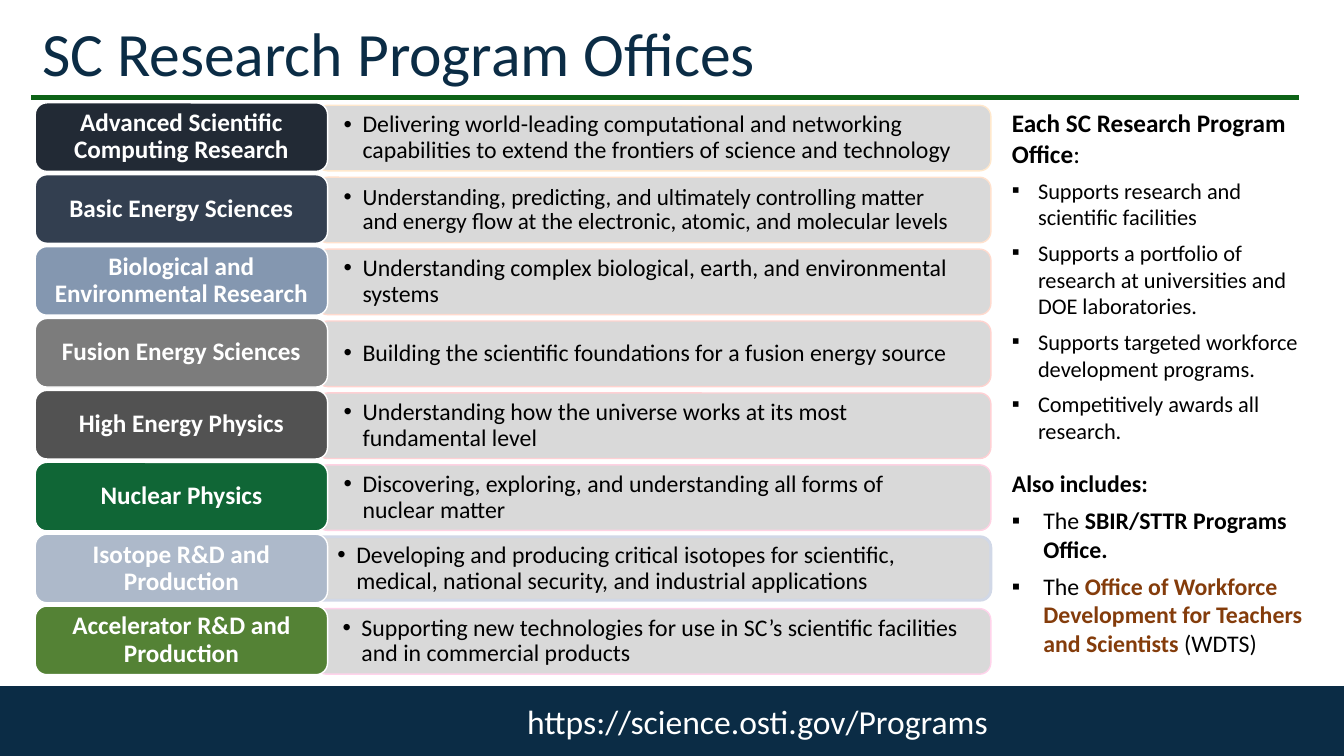
from dataclasses import dataclass

from lxml import etree
from pptx import Presentation
from pptx import util as u
from pptx.dml.color import RGBColor
from pptx.enum import shapes, text
from pptx.oxml import ns

COLUMNS, ROWS = 160, 90
CELL = u.Inches(7.5) // ROWS


@dataclass(frozen=True)
class Theme:
    font: str = "Calibri"
    navy: str = "0B2C45"
    green: str = "0D6317"
    grey: str = "D9D9D9"
    white: str = "FFFFFF"
    black: str = "000000"
    brown: str = "843C0B"
    title: float = 44
    address: float = 24
    heading: float = 18
    body: float = 17
    small: float = 16


@dataclass(frozen=True)
class Box:
    left: float
    top: float
    width: float
    height: float

    def lengths(self) -> list[int]:
        return [cells(value) for value in (self.left, self.top, self.width, self.height)]


@dataclass(frozen=True)
class Office:
    name: str
    color: str
    mission: str
    outline: str
    size: float = 17
    detail_left: float = 37.68
    detail_height: float = 7.8
    outline_width: float = 1


@dataclass(frozen=True)
class Piece:
    text: str
    size: float
    bold: bool = False
    color: str = "000000"


@dataclass(frozen=True)
class Entry:
    pieces: list[Piece]
    indent: float = 0
    after: float = 6


THEME = Theme()
FIRST_ROW, ROW_PITCH = 12.24, 8.56
DETAIL_RIGHT = 117.96
CORNER = 0.17

OFFICES = [
    Office("Advanced Scientific Computing Research", "222A35",
           "Delivering world-leading computational and networking capabilities "
           "to extend the frontiers of science and technology", "FFE8CC"),
    Office("Basic Energy Sciences", "333F50",
           "Understanding, predicting, and ultimately controlling matter and energy flow "
           "at the electronic, atomic, and molecular levels", "FFE1CD", size=16.5),
    Office("Biological and Environmental Research", "8497B0",
           "Understanding complex biological, earth, and environmental systems", "FFDACE"),
    Office("Fusion Energy Sciences", "7C7C7C",
           "Building the scientific foundations for a fusion energy source", "FFD3CF"),
    Office("High Energy Physics", "525252",
           "Understanding how the universe works at its most fundamental level", "FFD0D4"),
    Office("Nuclear Physics", "106636",
           "Discovering, exploring, and understanding all forms of nuclear matter", "FFD2E3"),
    Office("Isotope R&D and Production", "ADB9CA",
           "Developing and producing critical isotopes for scientific, medical, "
           "national security, and industrial applications", "D1D8E7",
           detail_left=36.96, detail_height=7.56, outline_width=2),
    Office("Accelerator R&D and Production", "548235",
           "Supporting new technologies for use in SC’s scientific facilities "
           "and in commercial products", "FFD3EB", detail_left=37.56),
]

SIDEBAR = [
    Entry([Piece("Each SC Research Program Office", THEME.heading, True), Piece(":", THEME.heading)]),
    Entry([Piece("Supports research and scientific facilities", THEME.small)], 3.12),
    Entry([Piece("Supports a portfolio of research at universities and DOE laboratories.",
                 THEME.small)], 3.12),
    Entry([Piece("Supports targeted workforce development programs.", THEME.small)], 3.12),
    Entry([Piece("Competitively awards all research.", THEME.small)], 3.12, 18),
    Entry([Piece("Also includes:", THEME.body, True)]),
    Entry([Piece("The ", THEME.body), Piece("SBIR/STTR Programs Office.", THEME.body, True)], 3.75),
    Entry([Piece("The ", THEME.body),
           Piece("Office of Workforce Development for Teachers and Scientists ",
                 THEME.body, True, THEME.brown),
           Piece("(WDTS)", THEME.body)], 3.75),
]


def cells(count: float) -> int:
    return round(count * CELL)


def style_font(font, size: float, color: str, bold: bool = False) -> None:
    font.name = THEME.font
    font.size = u.Pt(size)
    font.bold = bold
    font.color.rgb = RGBColor.from_string(color)


def add_bullet(paragraph, symbol: str, indent: float) -> None:
    properties = paragraph._p.get_or_add_pPr()
    properties.set("marL", str(cells(indent)))
    properties.set("indent", str(-cells(indent)))
    etree.SubElement(properties, ns.qn("a:buFont")).set("typeface", "Arial")
    etree.SubElement(properties, ns.qn("a:buChar")).set("char", symbol)


def set_margins(frame, left: float, vertical: float, right: float) -> None:
    frame.margin_left, frame.margin_right = cells(left), cells(right)
    frame.margin_top = frame.margin_bottom = cells(vertical)
    frame.vertical_anchor = text.MSO_ANCHOR.MIDDLE
    frame.word_wrap = True


def add_panel(slide, kind, box: Box, fill: str, line: str, width: float = 1):
    shape = slide.shapes.add_shape(kind, *box.lengths())
    shape.shadow.inherit = False
    shape.fill.solid()
    shape.fill.fore_color.rgb = RGBColor.from_string(fill)
    shape.line.color.rgb = RGBColor.from_string(line)
    shape.line.width = u.Pt(width)
    return shape


def add_caption(slide, box: Box, words: str, size: float, color: str, wrap: bool = True) -> None:
    frame = slide.shapes.add_textbox(*box.lengths()).text_frame
    frame.word_wrap = wrap
    frame.vertical_anchor = text.MSO_ANCHOR.MIDDLE
    frame.text = words
    frame.paragraphs[0].line_spacing = 0.9 if wrap else 1.0
    style_font(frame.paragraphs[0].runs[0].font, size, color)


def add_office(slide, office: Office, top: float) -> None:
    rounded = shapes.MSO_SHAPE.ROUNDED_RECTANGLE
    detail_box = Box(office.detail_left, top + 0.3,
                     DETAIL_RIGHT - office.detail_left, office.detail_height)
    detail = add_panel(slide, rounded, detail_box, THEME.grey, office.outline, office.outline_width)
    label = add_panel(slide, rounded, Box(4.2, top, 34.8, 8.16), office.color, THEME.white)
    set_margins(detail.text_frame, 2.84, 0.5, 3.2)
    set_margins(label.text_frame, 0.9, 0.45, 0.9)
    for shape, words in ((detail, office.mission), (label, office.name)):
        shape.adjustments[0] = CORNER
        shape.text_frame.text = words
        shape.text_frame.paragraphs[0].line_spacing = 0.9
    mission, name = detail.text_frame.paragraphs[0], label.text_frame.paragraphs[0]
    mission.alignment = text.PP_ALIGN.LEFT
    name.alignment = text.PP_ALIGN.CENTER
    add_bullet(mission, "•", 2.25)
    style_font(mission.runs[0].font, office.size, THEME.black)
    style_font(name.runs[0].font, THEME.heading, THEME.white, True)


def add_sidebar(slide, box: Box, entries: list[Entry]) -> None:
    frame = slide.shapes.add_textbox(*box.lengths()).text_frame
    frame.word_wrap = True
    for index, entry in enumerate(entries):
        paragraph = frame.add_paragraph() if index else frame.paragraphs[0]
        paragraph.space_after = u.Pt(entry.after)
        if entry.indent:
            add_bullet(paragraph, "▪", entry.indent)
        for piece in entry.pieces:
            run = paragraph.add_run()
            run.text = piece.text
            style_font(run.font, piece.size, piece.color, piece.bold)


def add_rule(slide, left: float, right: float, top: float) -> None:
    rule = slide.shapes.add_connector(shapes.MSO_CONNECTOR.STRAIGHT, cells(left), cells(top),
                                      cells(right), cells(top))
    rule.line.color.rgb = RGBColor.from_string(THEME.green)
    rule.line.width = u.Pt(3)
    etree.SubElement(rule._element.spPr, ns.qn("a:effectLst"))


def main() -> None:
    presentation = Presentation()
    presentation.slide_width, presentation.slide_height = cells(COLUMNS), cells(ROWS)
    slide = presentation.slides.add_slide(presentation.slide_layouts[6])
    add_panel(slide, shapes.MSO_SHAPE.RECTANGLE, Box(0, 81.7, COLUMNS, ROWS - 81.7),
              THEME.navy, THEME.navy)
    add_rule(slide, 3.72, 154.7, 11.6)
    add_caption(slide, Box(3.84, 1.68, 140, 10.2), "SC Research Program Offices",
                THEME.title, THEME.navy)
    add_sidebar(slide, Box(119.28, 12.24, 37.68, 67.2), SIDEBAR)
    for index, office in enumerate(OFFICES):
        add_office(slide, office, FIRST_ROW + index * ROW_PITCH)
    add_caption(slide, Box(61.56, 82.8, 57.84, 6), "https://science.osti.gov/Programs",
                THEME.address, THEME.white, wrap=False)
    presentation.save("out.pptx")


if __name__ == "__main__":
    main()
